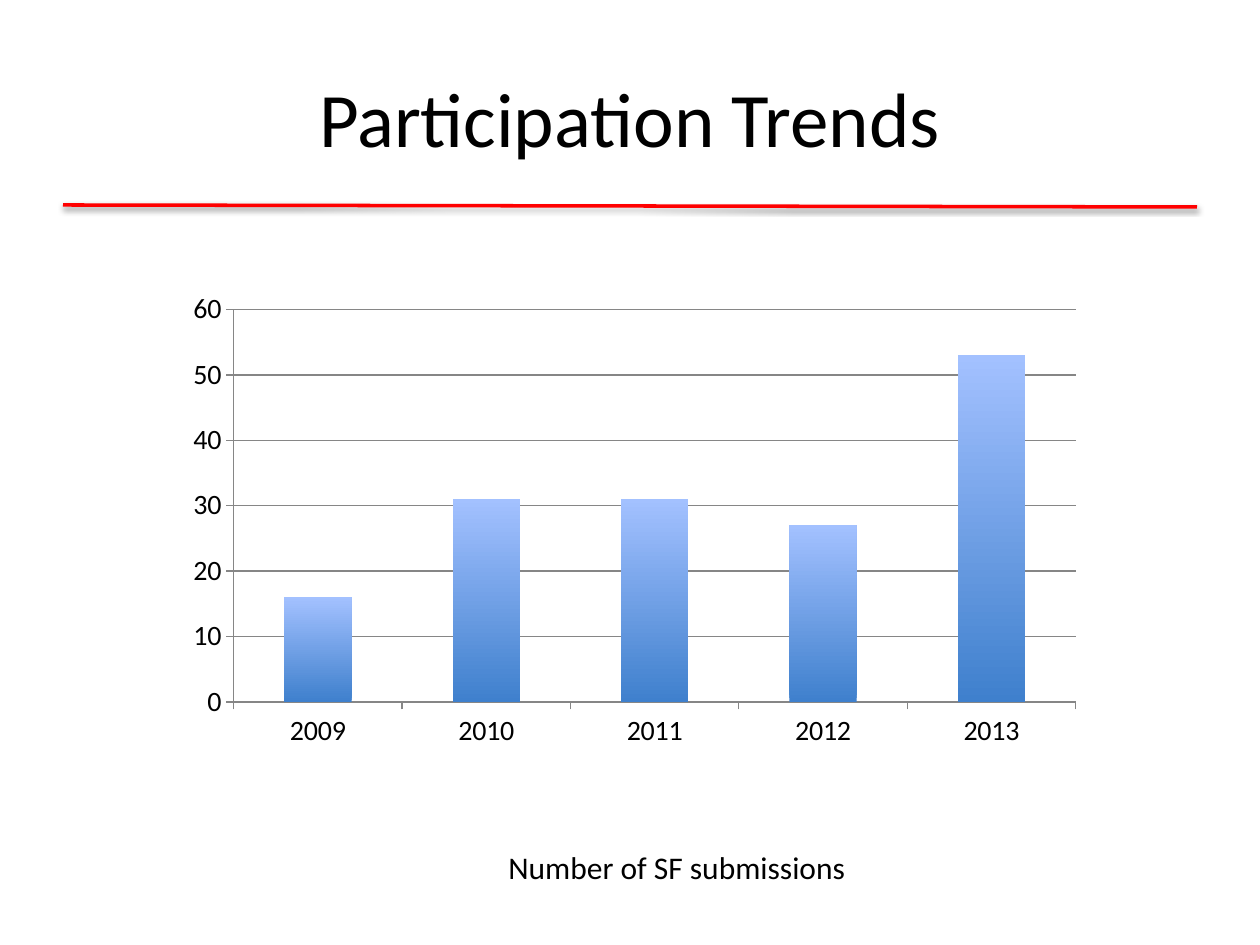
from lxml.etree import SubElement
from pptx import Presentation
from pptx.chart.data import CategoryChartData
from pptx.dml.color import RGBColor
from pptx.enum.chart import XL_CHART_TYPE, XL_TICK_MARK
from pptx.enum.shapes import MSO_CONNECTOR
from pptx.enum.text import MSO_ANCHOR, PP_ALIGN
from pptx.oxml.ns import qn
from pptx.util import Inches, Pt

FONT = "Calibri"
COLORS = {
    "text": "000000",
    "rule": "FF0000",
    "axis": "868686",
    "bar_bottom": "3F80CD",
    "bar_top": "A3C1FF",
}
SUBMISSIONS = {"2009": 16, "2010": 31, "2011": 31, "2012": 27, "2013": 53}


def px(count):
    return round(count * Inches(1) / 126)


def color(name):
    return RGBColor.from_string(COLORS[name])


def set_font(font, size):
    font.name = FONT
    font.size = Pt(size)
    font.color.rgb = color("text")


def add_text(slide, text, box, size, align=PP_ALIGN.LEFT,
             anchor=MSO_ANCHOR.TOP, wrap=True):
    frame = slide.shapes.add_textbox(*map(px, box)).text_frame
    frame.word_wrap = wrap
    frame.vertical_anchor = anchor
    paragraph = frame.paragraphs[0]
    paragraph.text = text
    paragraph.alignment = align
    set_font(paragraph.font, size)


def add_shadowed_rule(slide, start, end):
    rule = slide.shapes.add_connector(
        MSO_CONNECTOR.STRAIGHT, *map(px, start + end))
    rule.line.color.rgb = color("rule")
    rule.line.width = Pt(2)
    # Soft shadow straight below the rule
    effects = SubElement(rule._element.spPr, qn("a:effectLst"))
    shadow = SubElement(effects, qn("a:outerShdw"), blurRad="40000",
                        dist="20000", dir="5400000", rotWithShape="0")
    shade = SubElement(shadow, qn("a:srgbClr"), val=COLORS["text"])
    SubElement(shade, qn("a:alpha"), val="38000")


def style_axis(axis):
    axis.major_tick_mark = XL_TICK_MARK.OUTSIDE
    axis.minor_tick_mark = XL_TICK_MARK.NONE
    axis.format.line.color.rgb = color("axis")
    axis.format.line.width = Pt(0.75)


def add_column_chart(slide, values, box):
    data = CategoryChartData()
    data.categories = values.keys()
    data.add_series("Series 1", values.values())
    chart = slide.shapes.add_chart(
        XL_CHART_TYPE.COLUMN_CLUSTERED, *map(px, box), data).chart
    chart.has_legend = False
    chart.has_title = False
    set_font(chart.font, 16)

    # Axes and gridlines
    style_axis(chart.category_axis)
    value_axis = chart.value_axis
    style_axis(value_axis)
    value_axis.minimum_scale = 0
    value_axis.maximum_scale = 60
    value_axis.major_unit = 10
    value_axis.has_major_gridlines = True
    grid_line = value_axis.major_gridlines.format.line
    grid_line.color.rgb = color("axis")
    grid_line.width = Pt(0.75)

    # Columns, shaded from bottom to top
    plot = chart.plots[0]
    plot.gap_width = 150
    plot.vary_by_categories = False
    fill = plot.series[0].format.fill
    fill.gradient()
    fill.gradient_angle = 90
    for stop, name in zip(fill.gradient_stops, ("bar_bottom", "bar_top")):
        stop.color.rgb = color(name)


def main():
    presentation = Presentation()
    presentation.slide_width = Inches(10)
    presentation.slide_height = Inches(7.5)
    slide = presentation.slides.add_slide(presentation.slide_layouts[6])

    # Heading
    add_shadowed_rule(slide, (63, 205), (1197, 207))
    add_text(slide, "Participation Trends", (63, 38, 1134, 157), 44,
             PP_ALIGN.CENTER, MSO_ANCHOR.MIDDLE)

    # Chart and caption
    add_column_chart(slide, SUBMISSIONS, (175, 283, 919, 475))
    add_text(slide, "Number of SF submissions", (496, 842, 367, 50), 18,
             wrap=False)

    presentation.save("out.pptx")


if __name__ == "__main__":
    main()
